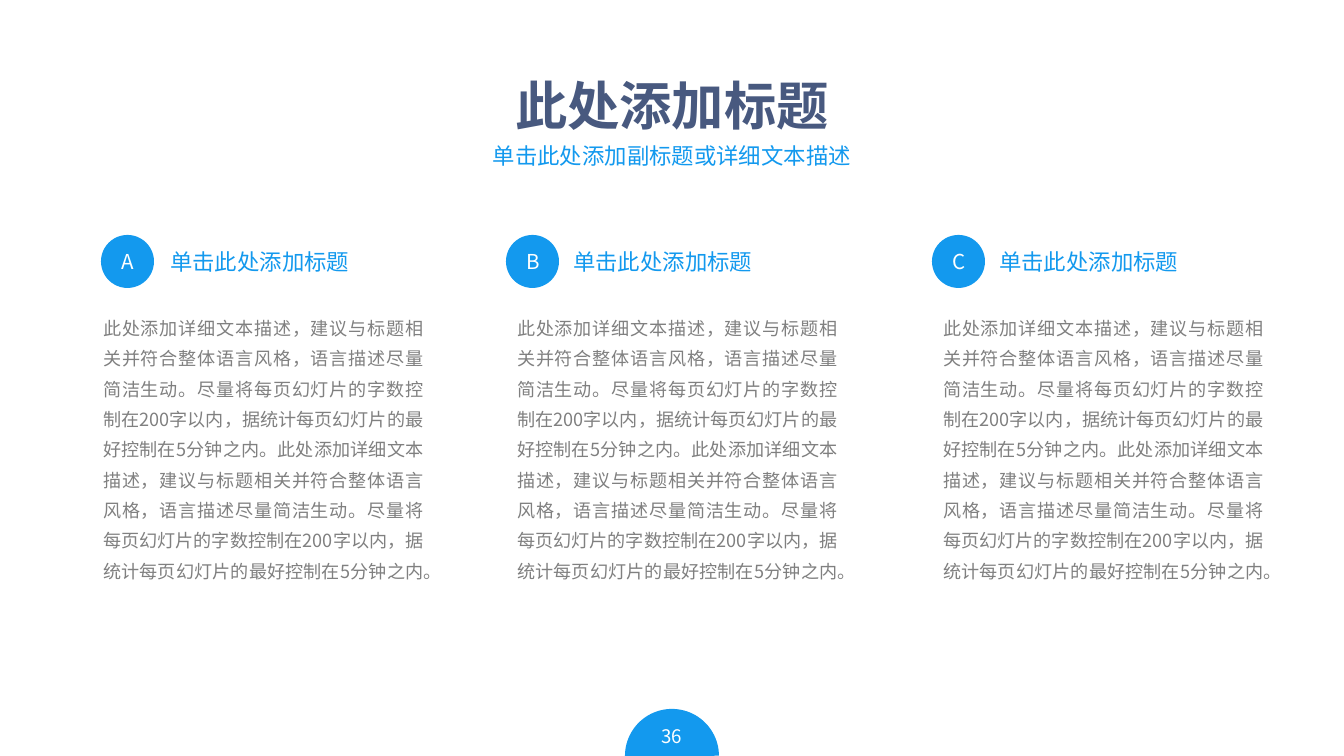
from dataclasses import dataclass

from lxml import etree
from pptx import Presentation
from pptx.dml.color import RGBColor
from pptx.enum.shapes import MSO_SHAPE
from pptx.enum.text import MSO_ANCHOR, PP_ALIGN
from pptx.oxml.ns import qn
from pptx.util import Emu, Pt

# Content
TITLE = "此处添加标题"
SUB = "单击此处添加副标题或详细文本描述"
HEAD = "单击此处添加标题"
BODY = (
    "此处添加详细文本描述，建议与标题相关并符合整体语言风格，语言描述尽量简洁生动。"
    "尽量将每页幻灯片的字数控制在200字以内，据统计每页幻灯片的最好控制在5分钟之内。"
) * 2
PAGE = "36"
# Letter, then the left edges of badge, heading and body
COLS = [("A", 101, 157, 90), ("B", 506, 560, 504), ("C", 932, 986, 930)]


@dataclass(frozen=True)
class Theme:
    font: str = "Noto Sans CJK SC"
    blue: str = "1399EE"
    navy: str = "48597F"
    gray: str = "808080"
    white: str = "FFFFFF"
    title: float = 28
    head: float = 12
    badge: float = 11
    page: float = 10
    body: float = 9.7


T = Theme()
WIDE, HIGH = 1344, 756
SCALE = 914400 * 10 / WIDE
LEAD = Pt(18.2)


def px(n):
    return Emu(round(n * SCALE))


def write(shape, text, size, color, align=PP_ALIGN.CENTER,
          anchor=MSO_ANCHOR.MIDDLE, lead=None, bold=False):
    frame = shape.text_frame
    frame.text = text
    frame.word_wrap = True
    frame.vertical_anchor = anchor
    para = frame.paragraphs[0]
    para.alignment = align
    if lead:
        para.line_spacing = lead
    for run in para.runs:
        font = run.font
        font.size, font.bold, font.name = Pt(size), bold, T.font
        font.color.rgb = RGBColor.from_string(color)
        # Chinese glyphs take the East Asian typeface
        east = etree.SubElement(run._r.get_or_add_rPr(), qn("a:ea"))
        east.set("typeface", T.font)


def label(box, *args, **style):
    write(slide.shapes.add_textbox(*map(px, box)), *args, **style)


def solid(kind, box):
    shape = slide.shapes.add_shape(kind, *map(px, box))
    shape.shadow.inherit = False
    shape.fill.solid()
    shape.fill.fore_color.rgb = RGBColor.from_string(T.blue)
    shape.line.fill.background()
    return shape


deck = Presentation()
deck.slide_width, deck.slide_height = px(WIDE), px(HIGH)
slide = deck.slides.add_slide(deck.slide_layouts[6])

# Page number on a half disc
disc = solid(MSO_SHAPE.PIE, (625, 709, 94, 94))
disc.adjustments[0] = 108
disc.adjustments[1] = 215.9
label((644, 716, 56, 41), PAGE, T.page, T.white)

# Title and subtitle
label((67, 42, 1210, 126), TITLE, T.title, T.navy, bold=True)
label((302, 128, 740, 47), SUB, T.head, T.blue,
      anchor=MSO_ANCHOR.TOP, lead=LEAD)

# Three columns
for mark, disc_x, head_x, body_x in COLS:
    badge = solid(MSO_SHAPE.ROUNDED_RECTANGLE, (disc_x, 235, 53, 53))
    badge.adjustments[0] = 0.5
    write(badge, mark, T.badge, T.white)
    label((head_x, 233, 292, 51), HEAD, T.head, T.blue,
          align=PP_ALIGN.LEFT, lead=LEAD)
    label((body_x, 302, 347, 333), BODY, T.body, T.gray,
          align=PP_ALIGN.JUSTIFY, anchor=MSO_ANCHOR.TOP, lead=1.4)

deck.save("out.pptx")
